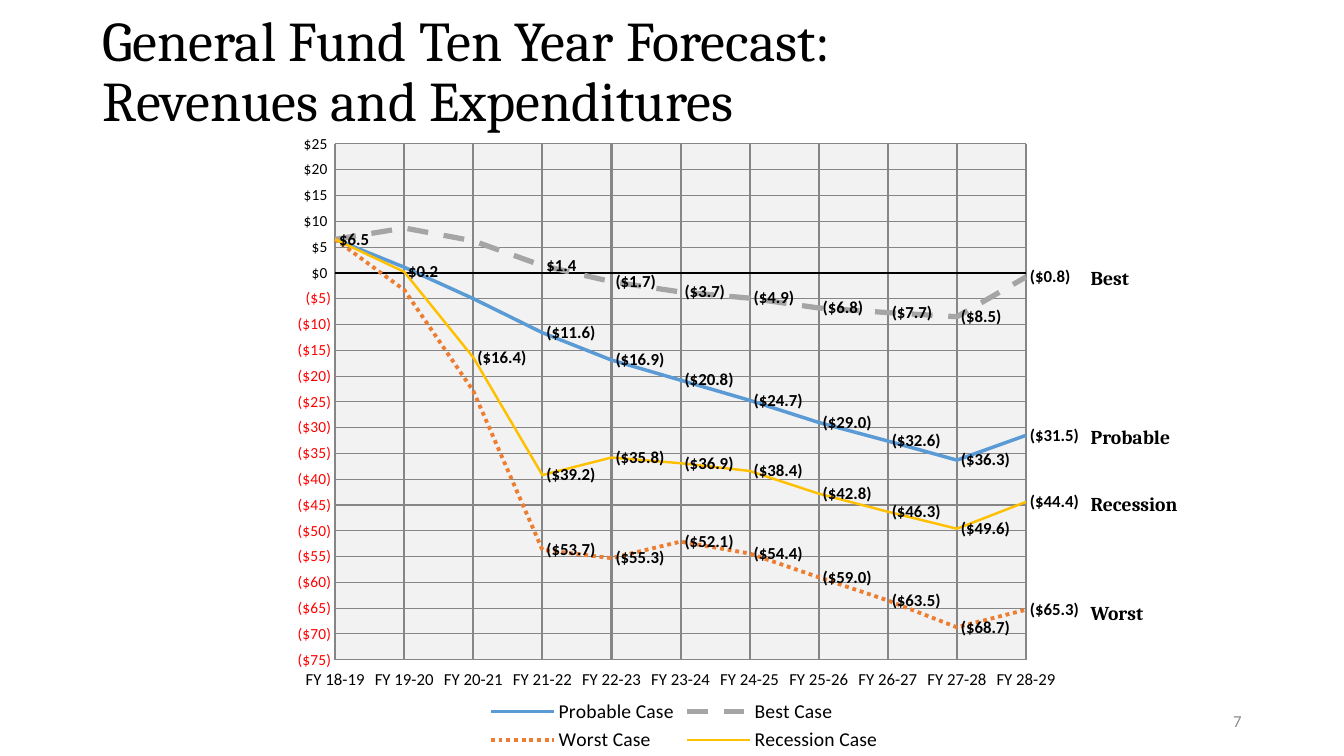
"""Build the ten year general fund forecast slide."""
from dataclasses import dataclass

from pptx import Presentation
from pptx.chart.data import CategoryChartData
from pptx.dml.color import RGBColor
from pptx.enum.chart import (XL_CHART_TYPE, XL_LABEL_POSITION, XL_LEGEND_POSITION,
                             XL_MARKER_STYLE, XL_TICK_LABEL_POSITION, XL_TICK_MARK)
from pptx.enum.dml import MSO_LINE
from pptx.enum.text import MSO_ANCHOR, PP_ALIGN
from pptx.oxml import parse_xml
from pptx.oxml.ns import nsdecls, qn
from pptx.util import Pt

LINE = XL_CHART_TYPE.LINE
BOTTOM = XL_LEGEND_POSITION.BOTTOM
NO_MARK = XL_MARKER_STYLE.NONE
NO_TICK = XL_TICK_MARK.NONE
LOW = XL_TICK_LABEL_POSITION.LOW
BESIDE = XL_LABEL_POSITION.RIGHT
SOLID, DASH, DOT = MSO_LINE.SOLID, MSO_LINE.DASH, MSO_LINE.ROUND_DOT
LEFT, RIGHT = PP_ALIGN.LEFT, PP_ALIGN.RIGHT
TOP, MIDDLE = MSO_ANCHOR.TOP, MSO_ANCHOR.MIDDLE


@dataclass(frozen=True)
class Theme:
    head: str = "Cambria"
    body: str = "Calibri"
    ink: str = "000000"
    mute: str = "8C8C8C"
    rule: str = "868686"
    plot: str = "F2F2F2"
    blue: str = "5B9BD5"
    gray: str = "A5A5A5"
    rust: str = "ED7D31"
    gold: str = "FFC000"
    title: float = 40
    name: float = 14
    label: float = 12
    scale: float = 11


THEME = Theme()
AXIS_FMT = r'"$"#,##0_);[Red]\("$"#,##0\)'
LABEL_FMT = r'"$"#,##0.0_);\("$"#,##0.0\)'
YEARS = [f"FY {year}-{year + 1}" for year in range(18, 29)]
PLOT = {"x": 0.066, "y": 0.115, "w": 0.859, "h": 0.746}
CASES = [
    ("Probable Case", THEME.blue, 2.5, SOLID, 3,
     (6.5, 1.1, -5, -11.6, -16.9, -20.8, -24.7, -29, -32.6, -36.3, -31.5)),
    ("Best Case", THEME.gray, 3.75, DASH, 3,
     (6.5, 8.7, 6.2, 1.4, -1.7, -3.7, -4.9, -6.8, -7.7, -8.5, -0.8)),
    ("Worst Case", THEME.rust, 2.75, DOT, 3,
     (6.5, -3.3, -22.9, -53.7, -55.3, -52.1, -54.4, -59, -63.5, -68.7, -65.3)),
    ("Recession Case", THEME.gold, 1.75, SOLID, 0,
     (6.5, 0.2, -16.4, -39.2, -35.8, -36.9, -38.4, -42.8, -46.3, -49.6, -44.4)),
]
ENDS = [("Best", 0), ("Probable", 96.5), ("Recession", 31.5), ("Worst", 60.5)]


class Deck:
    """Hold the theme and the current slide."""

    def __init__(self, prs, theme):
        self.theme = theme
        self.slide = prs.slides.add_slide(prs.slide_layouts[5])

    def style(self, font, size, color=None, face=None, bold=False):
        """Format a font."""
        font.name = face or self.theme.body
        font.size = Pt(size)
        font.bold = bold
        font.color.rgb = RGBColor.from_string(color or self.theme.ink)

    def stroke(self, line, color, width):
        """Format a line."""
        line.color.rgb = RGBColor.from_string(color)
        line.width = Pt(width)

    def title(self, text, box):
        """Place and format the title."""
        shape = self.slide.shapes.title
        shape.left, shape.top, shape.width, shape.height = map(Pt, box)
        frame = shape.text_frame
        frame.text = text
        frame.word_wrap = True
        frame.vertical_anchor = MIDDLE
        para = frame.paragraphs[0]
        para.alignment = LEFT
        para.line_spacing = 0.9
        for run in para.runs:
            self.style(run.font, self.theme.title, face=self.theme.head)

    def text(self, items, box, size, color, face, bold=False, align=LEFT, anchor=TOP):
        """Add a text box of (text, space before) paragraphs."""
        frame = self.slide.shapes.add_textbox(*map(Pt, box)).text_frame
        frame.word_wrap = True
        frame.vertical_anchor = anchor
        for i, (text, gap) in enumerate(items):
            para = frame.add_paragraph() if i else frame.paragraphs[0]
            para.text = text
            para.alignment = align
            if gap:
                para.space_before = Pt(gap)
            self.style(para.runs[0].font, size, color, face, bold)

    def axes(self, chart):
        """Format both axes and their grids."""
        cat, val = chart.category_axis, chart.value_axis
        for axis, size, width in ((cat, self.theme.label, 1.5), (val, self.theme.scale, 0.75)):
            axis.major_tick_mark = axis.minor_tick_mark = NO_TICK
            axis.has_major_gridlines = True
            self.stroke(axis.major_gridlines.format.line, self.theme.rule, width)
            self.style(axis.tick_labels.font, size)
        cat.tick_label_position = LOW
        self.stroke(cat.format.line, self.theme.ink, 1.5)
        val.format.line.fill.background()
        val.minimum_scale, val.maximum_scale, val.major_unit = -75, 25, 5
        val.tick_labels.number_format = AXIS_FMT
        val.tick_labels.number_format_is_linked = False
        root = val._element
        for old in root.findall(qn("c:crossBetween")):
            root.remove(old)
        root.find(qn("c:crosses")).addnext(
            parse_xml(f'<c:crossBetween {nsdecls("c")} val="midCat"/>'))

    def plot(self, chart):
        """Set the inner plot area and its fill."""
        area = chart._chartSpace.find(qn("c:chart")).find(qn("c:plotArea"))
        for old in area.findall(qn("c:layout")):
            area.remove(old)
        sizes = "".join(f'<c:{key} val="{val}"/>' for key, val in PLOT.items())
        area.insert(0, parse_xml(
            f'<c:layout {nsdecls("c")}><c:manualLayout><c:layoutTarget val="inner"/>'
            f'<c:xMode val="edge"/><c:yMode val="edge"/>{sizes}</c:manualLayout></c:layout>'))
        area.append(parse_xml(
            f'<c:spPr {nsdecls("c", "a")}><a:solidFill><a:srgbClr val="{self.theme.plot}"/>'
            f'</a:solidFill><a:ln w="9525"><a:solidFill><a:srgbClr val="{self.theme.rule}"/>'
            '</a:solidFill></a:ln></c:spPr>'))

    def series(self, line, color, width, dash, skip):
        """Format a series and hide its first labels."""
        line.smooth = False
        line.marker.style = NO_MARK
        self.stroke(line.format.line, color, width)
        line.format.line.dash_style = dash
        tags = line.data_labels
        tags.show_value = True
        tags.position = BESIDE
        tags.number_format = LABEL_FMT
        tags.number_format_is_linked = False
        self.style(tags.font, self.theme.label, bold=True)
        for i in range(skip):
            tags._element.insert(i, parse_xml(
                f'<c:dLbl {nsdecls("c")}><c:idx val="{i}"/><c:delete val="1"/></c:dLbl>'))

    def chart(self, box):
        """Add the forecast line chart."""
        data = CategoryChartData()
        data.categories = YEARS
        for case in CASES:
            data.add_series(case[0], case[-1])
        chart = self.slide.shapes.add_chart(LINE, *map(Pt, box), data).chart
        chart.has_title = False
        self.style(chart.font, 10)
        chart.plots[0].vary_by_categories = False
        chart.has_legend = True
        chart.legend.position = BOTTOM
        chart.legend.include_in_layout = False
        self.style(chart.legend.font, self.theme.name)
        self.axes(chart)
        self.plot(chart)
        for line, case in zip(chart.plots[0].series, CASES):
            self.series(line, *case[1:5])


def main():
    """Build and save the slide."""
    prs = Presentation()
    prs.slide_width, prs.slide_height = Pt(960), Pt(540)
    deck = Deck(prs, THEME)
    deck.title("General Fund Ten Year Forecast: \vRevenues and Expenditures",
               (66.25, 0, 828, 104.5))
    deck.chart((201.5, 46, 574.5, 494))
    deck.text(ENDS, (772, 186.5, 140.5, 271.5), THEME.name, THEME.ink, THEME.head, bold=True)
    deck.text([("7", 0)], (678, 500.5, 216, 28.75), THEME.label, THEME.mute, THEME.body,
              align=RIGHT, anchor=MIDDLE)
    prs.save("out.pptx")


if __name__ == "__main__":
    main()
